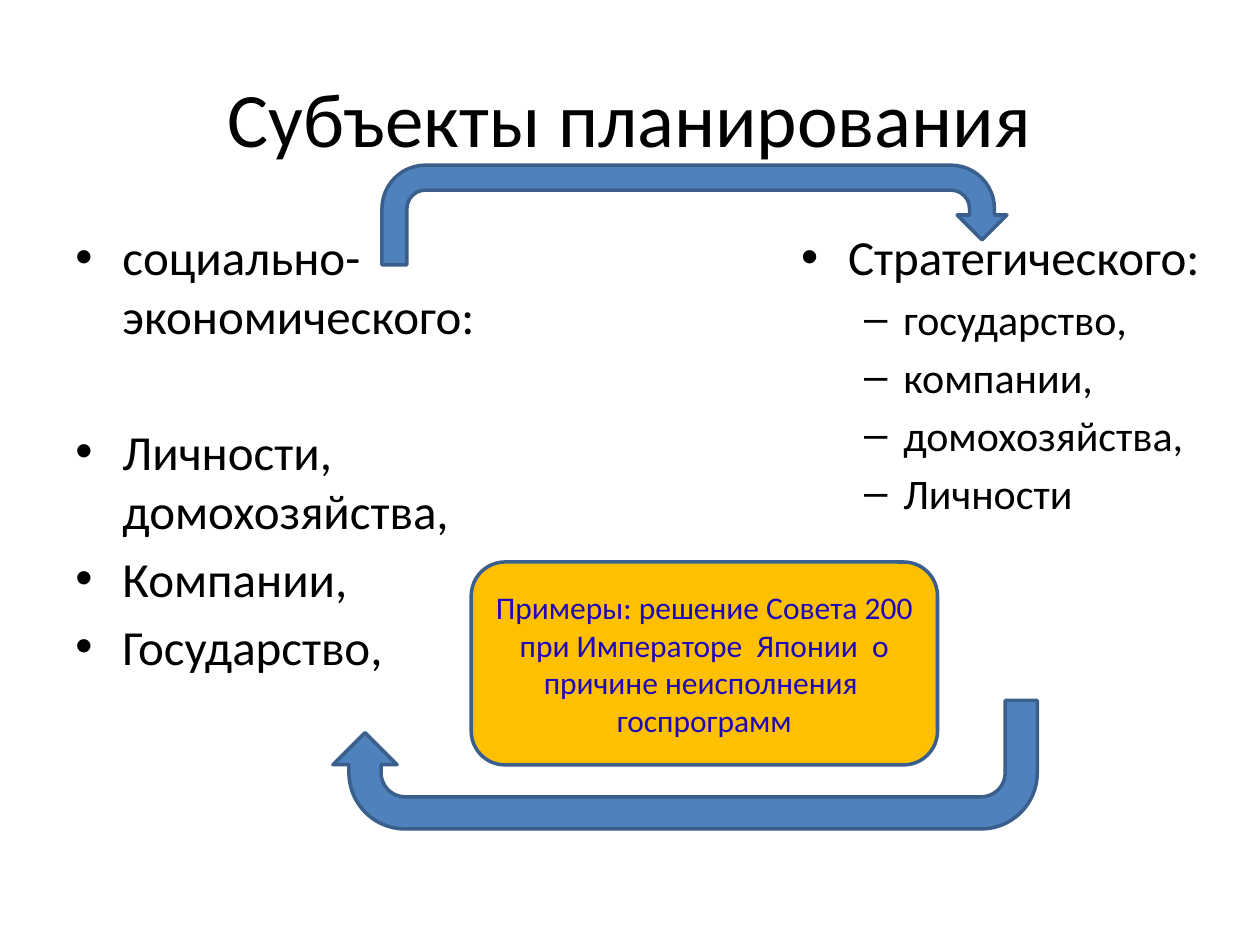
from dataclasses import dataclass
from pptx import Presentation
from pptx.dml.color import RGBColor
from pptx.enum.shapes import MSO_SHAPE
from pptx.enum.text import MSO_ANCHOR, PP_ALIGN
from pptx.oxml.ns import qn
from pptx.util import Cm, Pt
from lxml.etree import SubElement


@dataclass(frozen=True)
class Theme:
    """Colours, font and type sizes of the slide."""
    font: str = "Calibri"
    ink: str = "000000"
    blue: str = "4F81BD"
    edge: str = "3A5F8C"
    gold: str = "FFC000"
    note: str = "2006BA"
    head: int = 44
    main: int = 28
    sub: int = 24
    small: int = 18
    line: int = 2


THEME = Theme()
LEVELS = (
    {"mark": "•", "size": THEME.main, "left": 0.95, "hang": 0.95, "before": 5.3},
    {"mark": "–", "size": THEME.sub, "left": 2.06, "hang": 0.79, "before": 4.3},
)
GAP = 44
LEFT = (
    (0, "социально-экономического:", None),
    (0, "Личности, домохозяйства,", GAP),
    (0, "Компании,", None),
    (0, "Государство,", None),
)
RIGHT = (
    (0, "Стратегического:", None),
    (1, "государство,", None),
    (1, "компании,", None),
    (1, "домохозяйства,", None),
    (1, "Личности", None),
)
NOTE = ("Примеры: решение Совета 200 при Императоре  Японии  о причине "
        "неисполнения  госпрограмм")


def apply(item, form):
    """Set every format value on the item."""
    for name, value in form.items():
        setattr(item, name, value)


def write(para, text, size, tint=THEME.ink):
    """Add one styled run to a paragraph."""
    run = para.add_run()
    run.text = text
    apply(run.font, {"name": THEME.font, "size": Pt(size)})
    run.font.color.rgb = RGBColor.from_string(tint)


def add_box(slide, area, anchor=MSO_ANCHOR.TOP):
    """Add a wrapping text box and return its frame."""
    frame = slide.shapes.add_textbox(*map(Cm, area)).text_frame
    apply(frame, {"word_wrap": True, "vertical_anchor": anchor})
    return frame


def add_title(slide, area, text):
    """Add the centred title."""
    para = add_box(slide, area, MSO_ANCHOR.MIDDLE).paragraphs[0]
    para.alignment = PP_ALIGN.CENTER
    write(para, text, THEME.head)


def add_mark(para, look):
    """Give a paragraph its bullet and hanging indent."""
    props = para._p.get_or_add_pPr()
    props.set("marL", str(Cm(look["left"])))
    props.set("indent", str(-Cm(look["hang"])))
    SubElement(props, qn("a:buFont")).set("typeface", "Arial")
    SubElement(props, qn("a:buChar")).set("char", look["mark"])


def add_list(slide, area, rows):
    """Add a bullet list of level, text and gap rows."""
    frame = add_box(slide, area)
    for spot, (level, text, gap) in enumerate(rows):
        para = frame.add_paragraph() if spot else frame.paragraphs[0]
        look = LEVELS[level]
        apply(para, {"level": level, "space_before": Pt(gap or look["before"])})
        add_mark(para, look)
        write(para, text, look["size"])


def add_form(slide, kind, area, fill, turn=0):
    """Add a filled and outlined preset shape."""
    shape = slide.shapes.add_shape(kind, *map(Cm, area))
    shape.rotation = turn
    shape.shadow.inherit = False
    shape.fill.solid()
    shape.fill.fore_color.rgb = RGBColor.from_string(fill)
    shape.line.color.rgb = RGBColor.from_string(THEME.edge)
    shape.line.width = Pt(THEME.line)
    return shape


def add_note(slide, area, text):
    """Add the rounded note with centred text."""
    shape = add_form(slide, MSO_SHAPE.ROUNDED_RECTANGLE, area, THEME.gold)
    frame = shape.text_frame
    apply(frame, {"word_wrap": True, "vertical_anchor": MSO_ANCHOR.MIDDLE})
    para = frame.paragraphs[0]
    para.alignment = PP_ALIGN.CENTER
    write(para, text, THEME.small, THEME.note)


def main():
    """Build the slide and save it."""
    deck = Presentation()
    apply(deck, {"slide_width": Cm(25.4), "slide_height": Cm(19.05)})
    slide = deck.slides.add_slide(deck.slide_layouts[6])
    add_title(slide, (1.27, 0.76, 22.86, 3.18), "Субъекты планирования")
    add_list(slide, (1.27, 4.45, 9.22, 10.08), LEFT)
    add_list(slide, (15.9, 4.45, 8.61, 12.57), RIGHT)
    for area, turn in (((7.7, 3.33, 12.6, 2.01), 0),
                       ((6.71, 14.12, 14.2, 2.59), 180)):
        add_form(slide, MSO_SHAPE.U_TURN_ARROW, area, THEME.blue, turn)
    add_note(slide, (9.5, 11.33, 9.4, 4.09), NOTE)
    deck.save("out.pptx")


if __name__ == "__main__":
    main()
